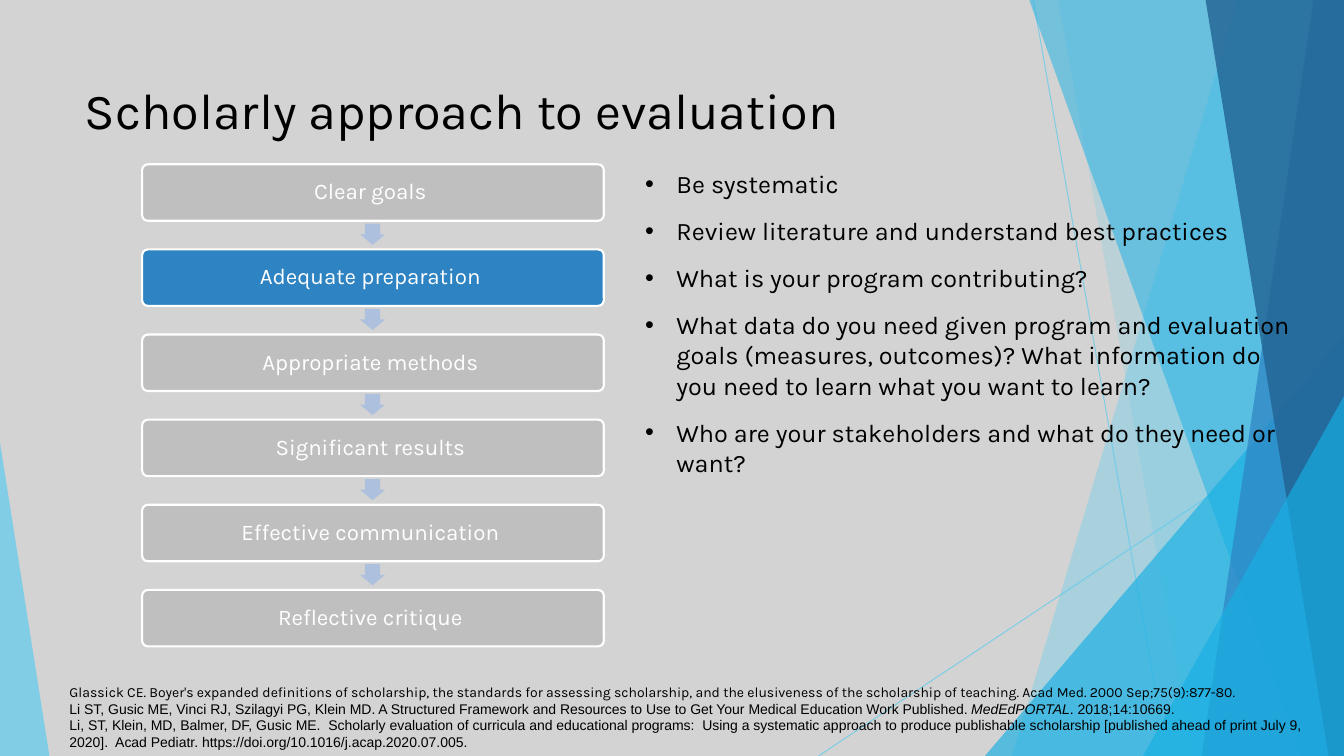
import pptx
import pptx.dml.color
import pptx.enum.shapes
import pptx.enum.text
import pptx.oxml
import pptx.oxml.ns
import pptx.util

SHAPE = pptx.enum.shapes.MSO_SHAPE
ALIGN = pptx.enum.text.PP_ALIGN
ANCHOR = pptx.enum.text.MSO_ANCHOR
Pt = pptx.util.Pt

# All lengths are percentages of the slide's width (x) and height (y)
WIDTH = pptx.util.Inches(13.33)
HEIGHT = pptx.util.Inches(7.5)

COLORS = {
    "background": "D3D3D3", "text": "000000", "white": "FFFFFF",
    "sky": "5FCBEF", "cyan": "17B0E4", "blue": "2E83C3", "navy": "226292",
    "step": "BFBFBF", "arrow": "ADC1DE",
}

STEPS = ["Clear goals ", "Adequate preparation ", "Appropriate methods ",
         "Significant results ", "Effective communication ", "Reflective critique "]
ACTIVE_STEP = 1

QUESTIONS = [
    "Be systematic",
    "Review literature and understand best practices",
    "What is your program contributing?",
    "What data do you need given program and evaluation goals (measures, outcomes)? "
    "What information do you need to learn what you want to learn?",
    "Who are your stakeholders and what do they need or want?",
]

# Each reference is a font and its runs of (text, italic)
REFERENCES = [
    ("Karla", [("Glassick CE. Boyer's expanded definitions of scholarship, the standards for "
                "assessing scholarship, and the elusiveness of the scholarship of teaching. "
                "Acad Med. 2000 Sep;75(9):877-80.", False)]),
    ("Arial", [("Li ST, Gusic ME, Vinci RJ, Szilagyi PG, Klein MD. A Structured Framework and "
                "Resources to Use to Get Your Medical Education Work Published. ", False),
               ("MedEdPORTAL", True), (". 2018;14:10669.", False)]),
    ("Arial", [("Li, ST, Klein, MD, Balmer, DF, Gusic ME.  Scholarly evaluation of curricula "
                "and educational programs:  Using a systematic approach to produce "
                "publishable scholarship [published ahead of print July 9, 2020].  "
                "Acad Pediatr. https://doi.org/10.1016/j.acap.2020.07.005.", False)]),
]

# Decoration: slabs as top x, bottom x, colour, opacity
BACK_SLABS = [(92.1, 75.3, "sky", 36), (78.75, 88.75, "sky", 20)]
FRONT_SLABS = [(76.58, 96.83, "cyan", 50), (97.73, 89.4, "blue", 70),
               (89.7, 98.85, "navy", 80)]
LINES = [(76.88, 0, 86.85, 100), (100, 53.73, 60.9, 100)]


def across(share):
    return round(WIDTH * share / 100)


def down(share):
    return round(HEIGHT * share / 100)


def box(left, top, width, height):
    return across(left), down(top), across(width), down(height)


def rgb(name):
    return pptx.dml.color.RGBColor.from_string(COLORS[name])


def apply(target, values):
    for name, value in values.items():
        setattr(target, name, value)


def set_opacity(fill_parent, percent):
    color = next(fill_parent.iter(pptx.oxml.ns.qn("a:srgbClr")))
    alpha = color.makeelement(pptx.oxml.ns.qn("a:alpha"), {"val": str(percent * 1000)})
    color.append(alpha)


def paint(shape, color, opacity=100):
    shape.shadow.inherit = False
    shape.fill.solid()
    shape.fill.fore_color.rgb = rgb(color)
    shape.line.fill.background()
    if opacity < 100:
        set_opacity(shape.element.spPr, opacity)


def add_run(paragraph, text, size, font="Karla", color="text", italic=False):
    run = paragraph.add_run()
    run.text = text
    apply(run.font, {"name": font, "size": Pt(size), "italic": italic})
    run.font.color.rgb = rgb(color)


def add_line(slide, start_x, start_y, end_x, end_y):
    line = slide.shapes.add_connector(
        pptx.enum.shapes.MSO_CONNECTOR.STRAIGHT,
        across(start_x), down(start_y), across(end_x), down(end_y))
    line.line.color.rgb = rgb("sky")
    line.line.width = Pt(0.75)
    properties = line.element.spPr
    set_opacity(properties, 70)
    properties.append(pptx.oxml.parse_xml(
        "<a:effectLst %s/>" % pptx.oxml.ns.nsdecls("a")))


def add_slab(slide, top_x, bottom_x, color, opacity):
    builder = slide.shapes.build_freeform(across(top_x), 0)
    builder.add_line_segments(
        [(WIDTH, 0), (WIDTH, HEIGHT), (across(bottom_x), HEIGHT)], close=True)
    paint(builder.convert_to_shape(), color, opacity)


def add_triangle(slide, place, tip, color, opacity):
    triangle = slide.shapes.add_shape(SHAPE.ISOSCELES_TRIANGLE, *box(*place))
    triangle.adjustments[0] = tip
    paint(triangle, color, opacity)


def add_step(slide, top, text, color):
    step = slide.shapes.add_shape(SHAPE.ROUNDED_RECTANGLE, *box(10.58, top, 34.35, 7.47))
    step.adjustments[0] = 0.1
    paint(step, color)
    step.line.color.rgb = rgb("white")
    step.line.width = Pt(1.5)
    inset = pptx.util.Inches(0.07)
    apply(step.text_frame, {
        "word_wrap": True, "vertical_anchor": ANCHOR.MIDDLE, "margin_left": inset,
        "margin_right": inset, "margin_top": inset, "margin_bottom": inset})
    paragraph = step.text_frame.paragraphs[0]
    apply(paragraph, {"alignment": ALIGN.CENTER, "line_spacing": 0.9})
    add_run(paragraph, text, 16, color="white")


def add_step_arrow(slide, top):
    arrow = slide.shapes.add_shape(SHAPE.DOWN_ARROW, *box(26.78, top, 1.88, 2.8))
    arrow.adjustments[0] = 0.6
    arrow.adjustments[1] = 0.5
    paint(arrow, "arrow")


def place_placeholder(shape, place, anchor):
    """Move a placeholder above everything drawn so far and clear its autofit."""
    shape.element.getparent().append(shape.element)
    apply(shape, dict(zip(("left", "top", "width", "height"), box(*place))))
    apply(shape.text_frame, {
        "word_wrap": True, "vertical_anchor": anchor,
        "auto_size": pptx.enum.text.MSO_AUTO_SIZE.NONE})
    return shape.text_frame


def paragraph_at(frame, index):
    return frame.add_paragraph() if index else frame.paragraphs[0]


def add_decoration(slide):
    for line in LINES:
        add_line(slide, *line)
    for slab in BACK_SLABS:
        add_slab(slide, *slab)
    add_triangle(slide, (73.28, 44.4, 26.72, 55.6), 1, "cyan", 66)
    for slab in FRONT_SLABS:
        add_slab(slide, *slab)
    add_triangle(slide, (85.05, 52.4, 14.95, 47.6), 1, "cyan", 66)
    add_triangle(slide, (0, 58.53, 3.68, 41.47), 0, "sky", 70)


def add_questions(shape):
    frame = place_placeholder(shape, (47.26, 21.6, 50.04, 42.67), ANCHOR.TOP)
    indent = pptx.util.Inches(0.31)
    for index, question in enumerate(QUESTIONS):
        paragraph = paragraph_at(frame, index)
        apply(paragraph, {"space_before": Pt(6), "space_after": Pt(6)})
        properties = paragraph._p.get_or_add_pPr()
        properties.set("marL", str(indent))
        properties.set("indent", str(-indent))
        add_run(paragraph, question, 18)


def add_references(slide):
    frame = slide.shapes.add_textbox(*box(4.43, 89.73, 95.57, 10.27)).text_frame
    frame.word_wrap = True
    for index, (font, runs) in enumerate(REFERENCES):
        paragraph = paragraph_at(frame, index)
        for text, italic in runs:
            add_run(paragraph, text, 10, font, italic=italic)


def main():
    presentation = pptx.Presentation()
    apply(presentation, {"slide_width": WIDTH, "slide_height": HEIGHT})
    slide = presentation.slides.add_slide(presentation.slide_layouts[1])
    slide.background.fill.solid()
    slide.background.fill.fore_color.rgb = rgb("background")
    add_decoration(slide)

    # Title
    frame = place_placeholder(slide.shapes.title, (5.55, 8.93, 70.52, 11.07), ANCHOR.MIDDLE)
    frame.paragraphs[0].alignment = ALIGN.LEFT
    add_run(frame.paragraphs[0], "Scholarly approach to evaluation", 36)

    # Flow of steps, with an arrow between neighbours
    for index, text in enumerate(STEPS):
        top = 21.73 + 11.26 * index
        if index:
            add_step_arrow(slide, top - 3.4)
        add_step(slide, top, text, "blue" if index == ACTIVE_STEP else "step")

    add_questions(slide.placeholders[1])
    add_references(slide)
    presentation.save("out.pptx")


if __name__ == "__main__":
    main()
